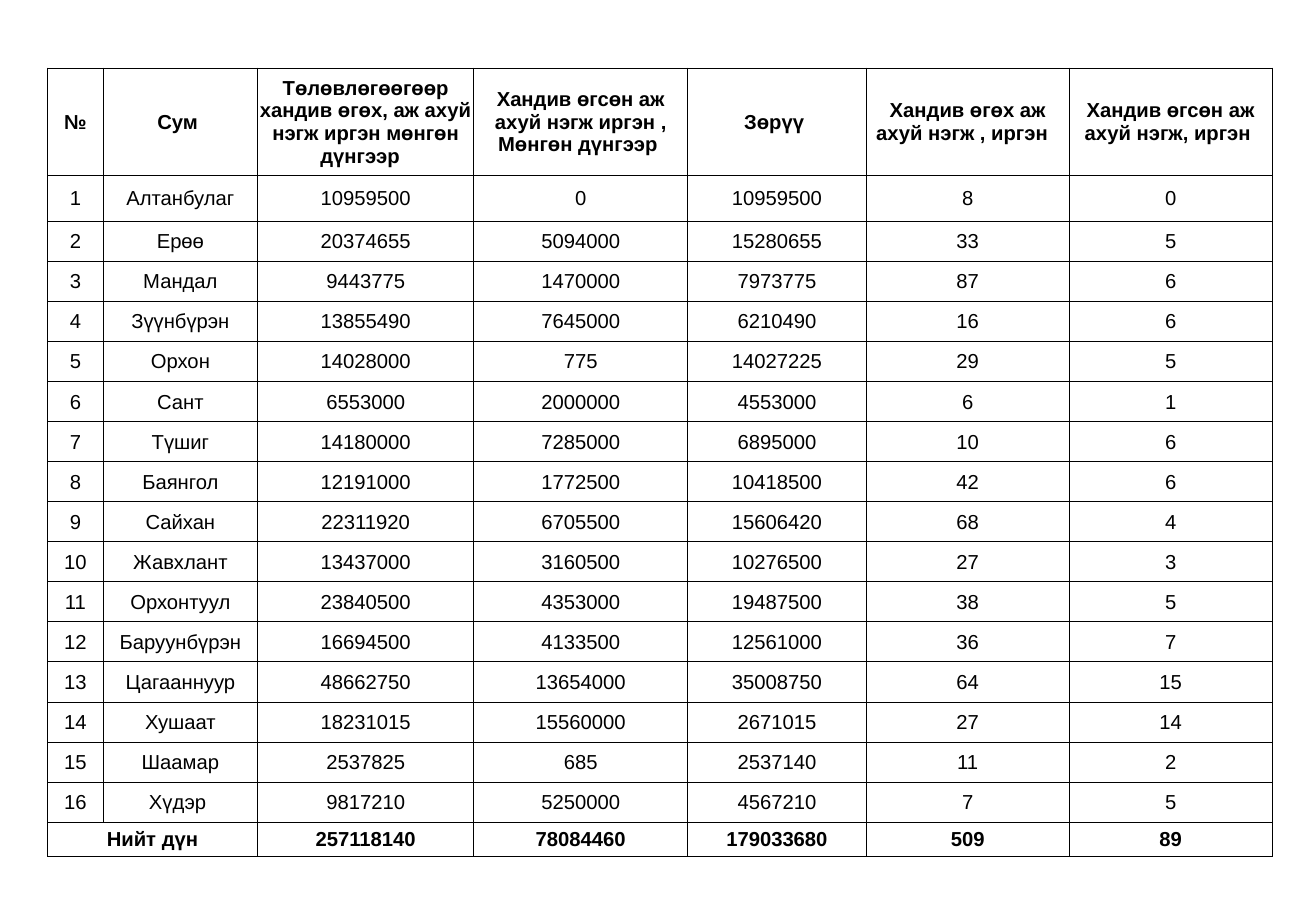
from typing import NamedTuple

from lxml import etree
from pptx import Presentation
from pptx import util as u
from pptx.dml.color import RGBColor
from pptx.enum import dml, text
from pptx.oxml import ns
from pptx.table import Table, _Cell

BLACK = RGBColor(0x00, 0x00, 0x00)
WHITE = RGBColor(0xFF, 0xFF, 0xFF)
FONT = "Arial"
FONT_SIZE = u.Pt(12)
BORDER_WIDTH = u.Pt(0.5)
CELL_INSET = u.Inches(0.01)

SLIDE_WIDTH = u.Inches(10.83)
SLIDE_HEIGHT = u.Inches(7.5)
TABLE_LEFT = u.Inches(0.39)
TABLE_TOP = u.Inches(0.56)
COLUMN_WIDTHS = (0.46, 1.27, 1.78, 1.76, 1.47, 1.67, 1.67)
HEADER_HEIGHT, FIRST_HEIGHT, BODY_HEIGHT, TOTAL_HEIGHT = 0.88, 0.38, 0.33, 0.28


class District(NamedTuple):
    name: str
    planned: int
    donated: int
    pledgers: int
    donors: int


HEADERS = (
    "№",
    "Сум ",
    "Төлөвлөгөөгөөр хандив өгөх, аж ахуй нэгж иргэн мөнгөн дүнгээр  ",
    "Хандив өгсөн аж ахуй нэгж иргэн , Мөнгөн дүнгээр ",
    "Зөрүү ",
    "Хандив өгөх аж ахуй нэгж , иргэн  ",
    "Хандив өгсөн аж ахуй нэгж, иргэн ",
)
DISTRICTS = (
    District("Алтанбулаг", 10959500, 0, 8, 0),
    District("Ерөө", 20374655, 5094000, 33, 5),
    District("Мандал", 9443775, 1470000, 87, 6),
    District("Зүүнбүрэн", 13855490, 7645000, 16, 6),
    District("Орхон", 14028000, 775, 29, 5),
    District("Сант", 6553000, 2000000, 6, 1),
    District("Түшиг", 14180000, 7285000, 10, 6),
    District("Баянгол", 12191000, 1772500, 42, 6),
    District("Сайхан", 22311920, 6705500, 68, 4),
    District("Жавхлант", 13437000, 3160500, 27, 3),
    District("Орхонтуул", 23840500, 4353000, 38, 5),
    District("Баруунбүрэн", 16694500, 4133500, 36, 7),
    District("Цагааннуур", 48662750, 13654000, 64, 15),
    District("Хушаат", 18231015, 15560000, 27, 14),
    District("Шаамар", 2537825, 685, 11, 2),
    District("Хүдэр ", 9817210, 5250000, 7, 5),
)
TOTAL = District("Нийт дүн", 257118140, 78084460, 509, 89)


def figures(district: District) -> tuple[str, ...]:
    difference = district.planned - district.donated
    values = (district.planned, district.donated, difference, district.pledgers, district.donors)
    return tuple(str(value) for value in values)


def draw_borders(cell: _Cell) -> None:
    properties = cell._tc.get_or_add_tcPr()
    for position, side in enumerate(("a:lnL", "a:lnR", "a:lnT", "a:lnB")):
        line = etree.Element(ns.qn(side), w=str(int(BORDER_WIDTH)))
        fill = etree.SubElement(line, ns.qn("a:solidFill"))
        etree.SubElement(fill, ns.qn("a:srgbClr"), val=str(BLACK))
        properties.insert(position, line)


def format_cell(cell: _Cell) -> None:
    cell.margin_left = cell.margin_right = cell.margin_top = CELL_INSET
    cell.margin_bottom = 0
    cell.vertical_anchor = text.MSO_ANCHOR.MIDDLE
    cell.fill.solid()
    cell.fill.fore_color.rgb = WHITE
    draw_borders(cell)


def write_cell(cell: _Cell, content: str, bold: bool) -> None:
    para = cell.text_frame.paragraphs[0]
    para.alignment = text.PP_ALIGN.CENTER
    span = para.add_run()
    span.text = content
    span.font.name = FONT
    span.font.size = FONT_SIZE
    span.font.bold = bold
    span.font.color.rgb = BLACK


def size_grid(table: Table, heights: list[float]) -> None:
    for column, width in zip(table.columns, COLUMN_WIDTHS):
        column.width = u.Inches(width)
    for row, height in zip(table.rows, heights):
        row.height = u.Inches(height)


def main() -> None:
    deck = Presentation()
    deck.slide_width, deck.slide_height = SLIDE_WIDTH, SLIDE_HEIGHT
    page = deck.slides.add_slide(deck.slide_layouts[6])

    body = [(str(number), district.name, *figures(district))
            for number, district in enumerate(DISTRICTS, start=1)]
    records = [HEADERS, *body, (TOTAL.name, "", *figures(TOTAL))]
    heights = [HEADER_HEIGHT, FIRST_HEIGHT, *[BODY_HEIGHT] * (len(body) - 1), TOTAL_HEIGHT]
    frame = page.shapes.add_table(
        len(records), len(HEADERS), TABLE_LEFT, TABLE_TOP,
        u.Inches(sum(COLUMN_WIDTHS)), u.Inches(sum(heights)))
    table = frame.table
    table.first_row = table.horz_banding = False
    size_grid(table, heights)

    last = len(records) - 1
    table.cell(last, 0).merge(table.cell(last, 1))
    for row, record in enumerate(records):
        for column, content in enumerate(record):
            cell = table.cell(row, column)
            format_cell(cell)
            if not cell.is_spanned:
                write_cell(cell, content, bold=row in (0, last))

    deck.save("out.pptx")


if __name__ == "__main__":
    main()
